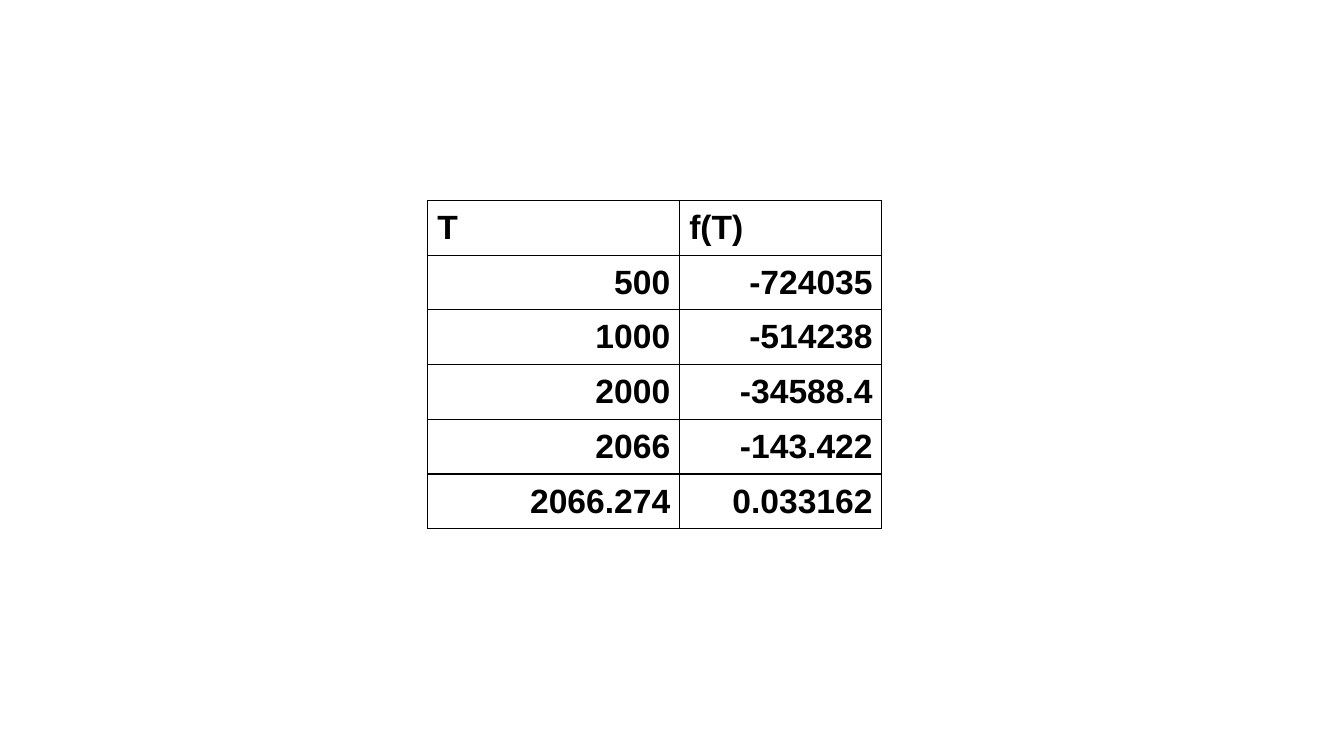
import dataclasses

import lxml.etree
import pptx
import pptx.dml.color
import pptx.enum.text
import pptx.oxml.ns
import pptx.util

Cm = pptx.util.Cm
Align = pptx.enum.text.PP_ALIGN

ROWS = [
    ("T", "f(T)"),
    ("500", "-724035"),
    ("1000", "-514238"),
    ("2000", "-34588.4"),
    ("2066", "-143.422"),
    ("2066.274", "0.033162"),
]


@dataclasses.dataclass(frozen=True)
class Theme:
    font: str = "Arial"
    size: int = 24
    ink: str = "000000"
    border: float = 1


class Page:
    def __init__(self, deck, theme):
        self.theme = theme
        self.slide = deck.slides.add_slide(deck.slide_layouts[6])

    def add_table(self, rows, left, top, widths, row_height):
        """Add a ruled table with a left-aligned header and right-aligned numbers."""
        frame = self.slide.shapes.add_table(
            len(rows), len(widths), left, top, sum(widths), row_height * len(rows))
        table = frame.table
        table.first_row = table.horz_banding = False
        for column, width in zip(table.columns, widths):
            column.width = width
        for row_index, values in enumerate(rows):
            table.rows[row_index].height = row_height
            align = Align.RIGHT if row_index else Align.LEFT
            for column_index, value in enumerate(values):
                self.fill_cell(table.cell(row_index, column_index), value, align)

    def fill_cell(self, cell, value, align):
        margins = {"margin_left": Cm(0.25), "margin_top": Cm(0.22),
                   "margin_right": Cm(0.23), "margin_bottom": Cm(0)}
        for name, margin in margins.items():
            setattr(cell, name, margin)
        self.rule_cell(cell)
        cell.fill.background()
        para = cell.text_frame.paragraphs[0]
        para.alignment = align
        span = para.add_run()
        span.text = value
        style = {"name": self.theme.font, "size": pptx.util.Pt(self.theme.size), "bold": True}
        for name, setting in style.items():
            setattr(span.font, name, setting)
        span.font.color.rgb = pptx.dml.color.RGBColor.from_string(self.theme.ink)

    def rule_cell(self, cell):
        """Draw a solid border on all four sides of the cell."""
        qn = pptx.oxml.ns.qn
        properties = cell._tc.get_or_add_tcPr()
        for side in ("a:lnL", "a:lnR", "a:lnT", "a:lnB"):
            line = lxml.etree.SubElement(
                properties, qn(side), w=str(pptx.util.Pt(self.theme.border)))
            fill = lxml.etree.SubElement(line, qn("a:solidFill"))
            lxml.etree.SubElement(fill, qn("a:srgbClr"), val=self.theme.ink)


def main():
    deck = pptx.Presentation()
    deck.slide_width, deck.slide_height = Cm(33.87), Cm(19.05)
    page = Page(deck, Theme())
    page.add_table(ROWS, left=Cm(10.77), top=Cm(5.05),
                   widths=[Cm(6.35), Cm(5.1)], row_height=Cm(1.38))
    deck.save("out.pptx")


if __name__ == "__main__":
    main()
